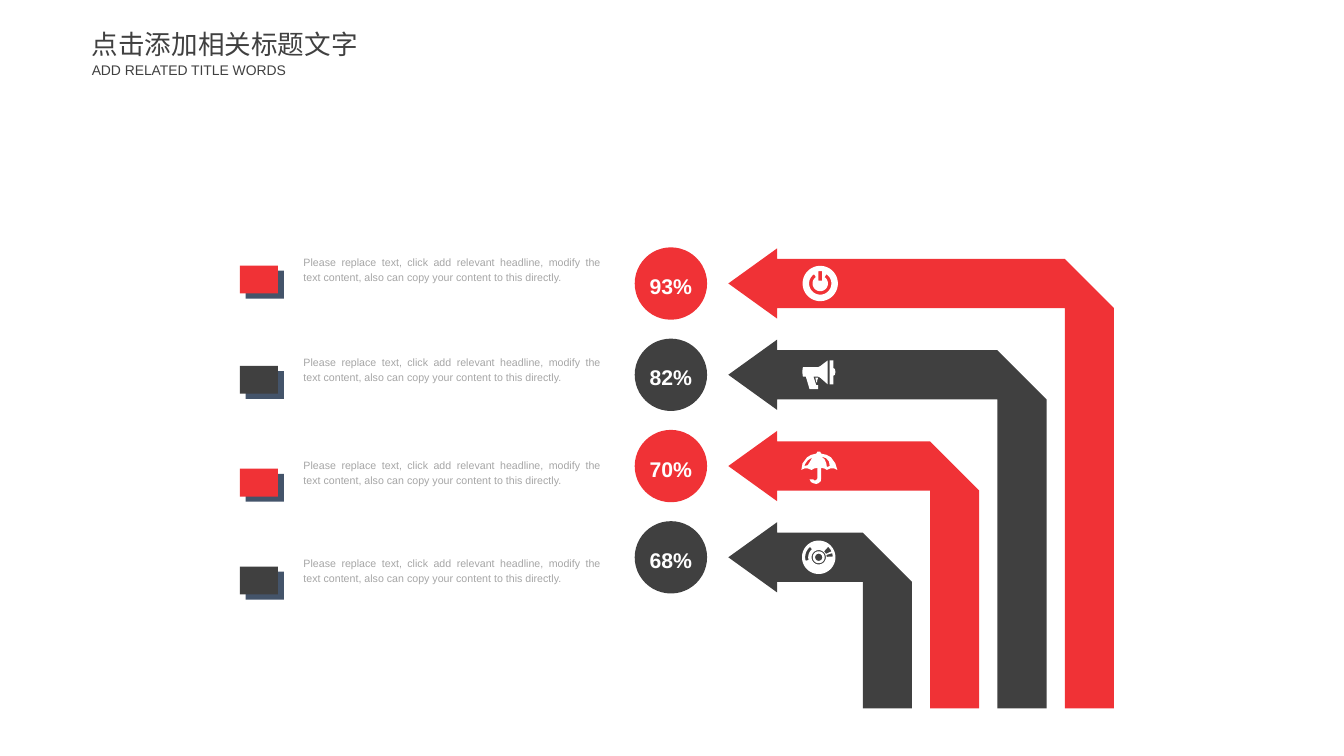
import math

from pptx import Presentation
from pptx import util as u
from pptx.dml.color import RGBColor
from pptx.enum import shapes, text

RED = RGBColor(0xF0, 0x32, 0x36)
CHARCOAL = RGBColor(0x40, 0x40, 0x40)
SLATE = RGBColor(0x44, 0x54, 0x6A)
GREY = RGBColor(0xA6, 0xA6, 0xA6)
WHITE = RGBColor(0xFF, 0xFF, 0xFF)

BODY = ("Please replace text, click add relevant headline, modify the text "
        "content, also can copy your content to this directly.")

FIRST_ROW, ROW_STEP = 213.6, 68.75
CIRCLE_X, CIRCLE_SIZE = 505.3, 54.5
TIP_X, HEAD_X, HEAD_HALF = 548.6, 585.4, 26.5
SHAFT, FIRST_LEG, LEG_STEP, LEG_BOTTOM = 37, 839, 50.7, 533.6
ICON_X = 617.4
MARKER_X, MARKER_W, MARKER_H = 180.7, 28.7, 21


def arc(radius, start=0, end=360, cx=0):
    """Points along an arc; degrees run clockwise from three o'clock."""
    steps = max(4, int(abs(end - start) / 8))
    angles = [math.radians(start + (end - start) * i / steps)
              for i in range(steps + 1)]
    return [(cx + radius * math.cos(a), radius * math.sin(a)) for a in angles]


def band(inner, outer, start, end, cx=0):
    """Outline of a ring segment."""
    return arc(outer, start, end, cx) + arc(inner, end, start, cx)


# Icon outlines, relative to the middle of the arrow shaft
POWER = [
    arc(13.3, cx=0.4),
    [(-1, -9.4), (1.8, -9.4), (1.8, -2.2), (-1, -2.2)],
    band(5.8, 8.4, -56, 236, cx=0.4),
]
MEGAPHONE = [
    [(-12.6, -5.8), (-1.1, -5.8), (0.4, -6.5), (6.1, -10.8), (6.1, 7.2),
     (0.4, 2.2), (-1.1, 1.4), (-4.7, 1.4), (-2.5, 7.9), (-1.1, 7.9),
     (-1.1, 10.8), (-7.6, 10.8), (-10.4, 1.4), (-12.6, 1.4), (-13.1, -2.2)],
    [(7.6, -10.8), (10.4, -10.8), (10.4, -5), (11.5, -4.3), (11.9, -2.2),
     (11.5, 0), (10.4, 0.7), (10.4, 7.2), (7.6, 7.2)],
    [(-1.1, 2.2), (-3.2, 2.2), (-2.5, 5.8), (-1.8, 5.8), (-1.8, 4.3)],
]
UMBRELLA = [
    [(-4.7, 10.1), (-4, 10.8), (-3.2, 10.8), (-2.2, 10.1), (-1.8, 9.4),
     (-1.8, 1.4), (-4, 1.8), (-6.1, 2.9), (-9, 1.8), (-11.5, 1.8),
     (-13.8, 2.9), (-12.9, -2), (-9.5, -6.6), (-6.5, -8.4), (-2.5, -9.4),
     (-1.8, -10.8), (0.4, -10.8), (1.1, -9.4), (5.3, -8.4), (8.5, -6.6),
     (11.8, -2), (13.3, 2.9), (11, 1.8), (8, 1.8), (5.4, 2.9), (3.5, 1.8),
     (1.1, 1.4), (1.1, 9.4), (0.8, 11.5), (-1.1, 13), (-2.5, 13.5),
     (-4.7, 13), (-6.5, 12), (-7.6, 10.1)],
    [(5.4, 0.7), (7.6, 0), (7, -3.5), (4.8, -6), (1.1, -7.2), (3.8, -5),
     (5, -2)],
    [(-11.5, 0), (-9, -0.7), (-7.5, -3), (-5.4, -6.5), (-8.8, -4.5),
     (-11, -1.5)],
]
DISC = [arc(r, cx=-0.7) for r in (12.6, 5.4, 4.5, 2.7)] + [
    band(7.9, 10.2, 165, 230, cx=-0.7),
    band(6, 10.6, -48, -25, cx=-0.7),
    band(6, 10.6, -17, -3, cx=-0.7),
]

# share, colour, icon, top of the description
ROWS = [
    ("93%", RED, POWER, 187.2),
    ("82%", CHARCOAL, MEGAPHONE, 262.8),
    ("70%", RED, UMBRELLA, 340.3),
    ("68%", CHARCOAL, DISC, 414),
]


class SlideBuilder:
    font = "Arial"

    def __init__(self, slide):
        self.shapes = slide.shapes

    def paint(self, shape, colour):
        shape.shadow.inherit = False
        shape.fill.solid()
        shape.fill.fore_color.rgb = colour
        shape.line.fill.background()
        return shape

    def preset(self, kind, box, colour):
        lengths = [u.Pt(value) for value in box]
        return self.paint(self.shapes.add_shape(kind, *lengths), colour)

    def outline(self, contours, colour, dx=0, dy=0):
        """Draw closed contours as one shape; nested ones become holes."""
        moved = [[(u.Pt(x + dx), u.Pt(y + dy)) for x, y in contour]
                 for contour in contours]
        builder = self.shapes.build_freeform(*moved[0][0])
        for contour in moved:
            builder.move_to(*contour[0])
            builder.add_line_segments(contour[1:], close=True)
        return self.paint(builder.convert_to_shape(), colour)

    def set_text(self, shape, words, colour, frame_format, paragraph_format,
                 font_format):
        frame = shape.text_frame
        paragraph = frame.paragraphs[0]
        run = paragraph.add_run()
        run.text = words
        run.font.color.rgb = colour
        for target, values in ((frame, frame_format),
                               (paragraph, paragraph_format),
                               (run.font, {"name": self.font, **font_format})):
            for name, value in values.items():
                setattr(target, name, value)

    def text_box(self, box, *content):
        lengths = [u.Pt(value) for value in box]
        self.set_text(self.shapes.add_textbox(*lengths), *content)

    def heading(self, box, words, size):
        margins = {f"margin_{side}": 0
                   for side in ("left", "top", "right", "bottom")}
        self.text_box(box, words, CHARCOAL, {"word_wrap": False, **margins},
                      {}, {"size": u.Pt(size)})

    def share_circle(self, y, share, colour):
        half = CIRCLE_SIZE / 2
        circle = self.preset(
            shapes.MSO_SHAPE.OVAL,
            (CIRCLE_X - half, y - half, CIRCLE_SIZE, CIRCLE_SIZE), colour)
        self.set_text(circle, share, WHITE,
                      {"word_wrap": False,
                       "vertical_anchor": text.MSO_ANCHOR.MIDDLE},
                      {"alignment": text.PP_ALIGN.CENTER, "line_spacing": 1.2},
                      {"size": u.Pt(16), "bold": True})

    def bent_arrow(self, y, right, colour):
        top, bottom, left = y - SHAFT / 2, y + SHAFT / 2, right - SHAFT
        self.outline([[
            (TIP_X, y), (HEAD_X, y - HEAD_HALF), (HEAD_X, top), (left, top),
            (right, bottom), (right, LEG_BOTTOM), (left, LEG_BOTTOM),
            (left, bottom), (HEAD_X, bottom), (HEAD_X, y + HEAD_HALF),
        ]], colour)

    def description(self, top, colour):
        for offset_x, offset_y, fill in ((4.4, 3.9, SLATE), (0, 0, colour)):
            self.preset(shapes.MSO_SHAPE.RECTANGLE,
                        (MARKER_X + offset_x, top + 12.8 + offset_y,
                         MARKER_W, MARKER_H), fill)
        self.text_box((221.5, top, 238.3, 29.5), BODY, GREY,
                      {"word_wrap": True},
                      {"alignment": text.PP_ALIGN.JUSTIFY,
                       "line_spacing": 1.2},
                      {"size": u.Pt(8)})


def main():
    deck = Presentation()
    deck.slide_width, deck.slide_height = u.Pt(1012.32), u.Pt(569.52)
    page = SlideBuilder(deck.slides.add_slide(deck.slide_layouts[6]))

    page.heading((69.1, 20.9, 201.6, 24.5), "点击添加相关标题文字", 20)
    page.heading((69.1, 46.1, 149.8, 13), "ADD RELATED TITLE WORDS", 10.5)

    for index, (share, colour, icon, description_top) in enumerate(ROWS):
        y = FIRST_ROW + index * ROW_STEP
        page.share_circle(y, share, colour)
        page.bent_arrow(y, FIRST_LEG - index * LEG_STEP, colour)
        page.outline(icon, WHITE, ICON_X, y)
        page.description(description_top, colour)

    deck.save("out.pptx")


if __name__ == "__main__":
    main()
